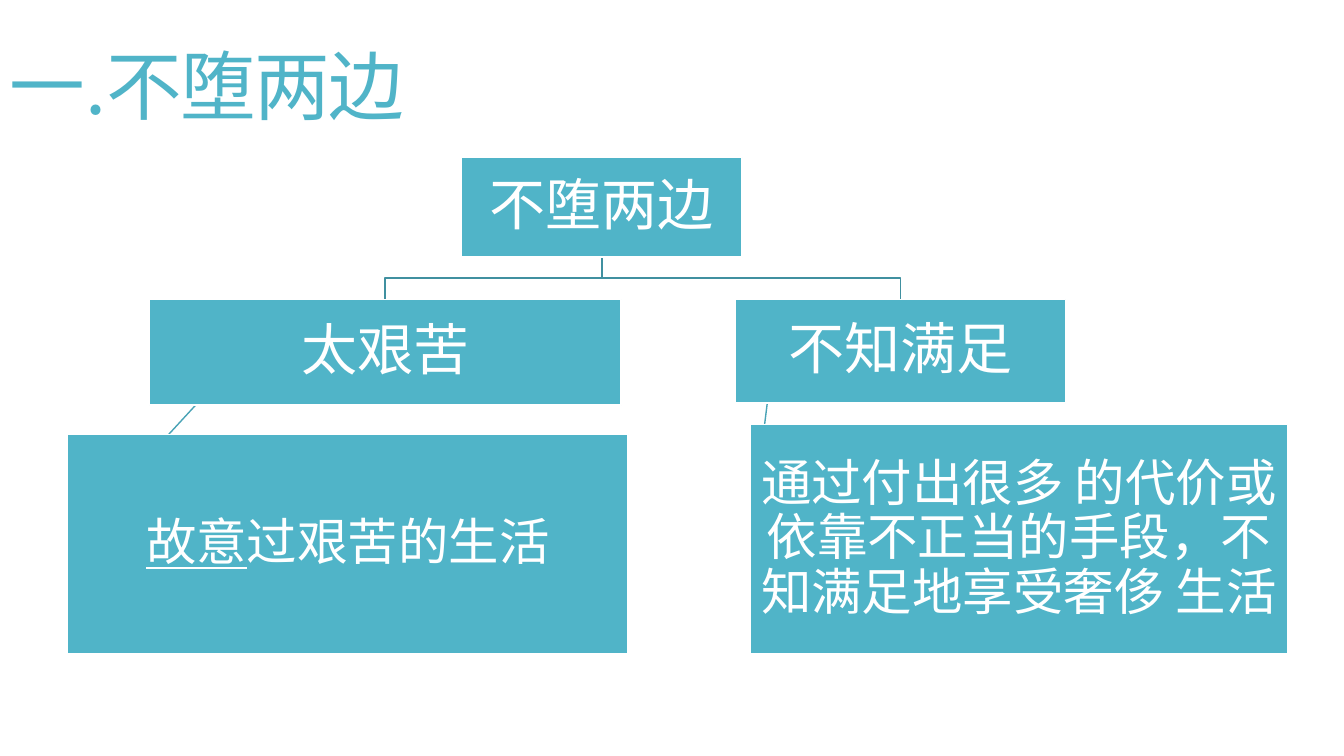
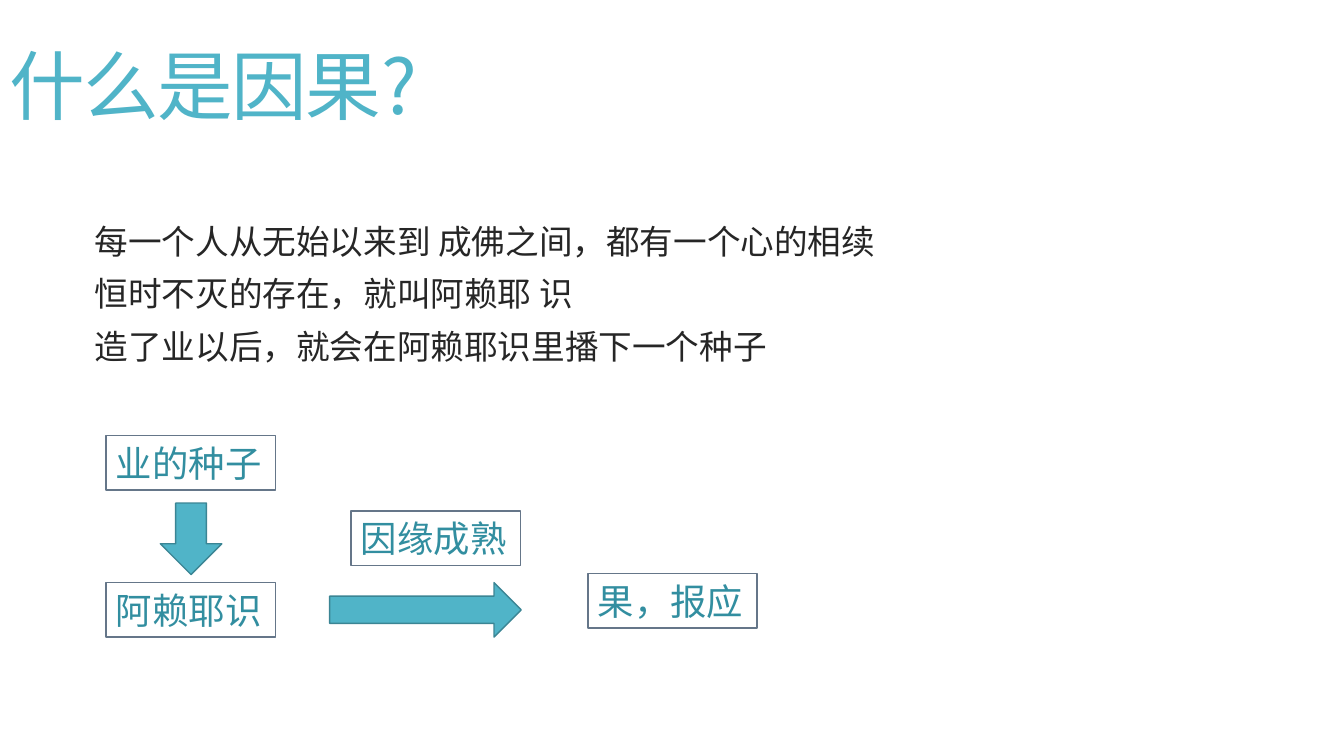
"""Build two slides: a tree on the two extremes and a flow on cause and effect."""
from dataclasses import dataclass

from pptx import Presentation
from pptx import util as u
from pptx.dml.color import RGBColor
from pptx.enum import shapes, text
from pptx.oxml.ns import qn
from lxml import etree

PX = 9144
TEAL = RGBColor(0x50, 0xB4, 0xC8)
DEEP_TEAL = RGBColor(0x32, 0x8E, 0xA0)
ELBOW_LINE = RGBColor(0x40, 0x90, 0xA0)
BRANCH_LINE = RGBColor(0x49, 0xA3, 0xB6)
ARROW_LINE = RGBColor(0x3B, 0x85, 0x94)
SLATE = RGBColor(0x65, 0x76, 0x89)
INK = RGBColor(0x26, 0x26, 0x26)
WHITE = RGBColor(0xFF, 0xFF, 0xFF)
CJK_FONT = "Noto Sans CJK SC"
LATIN_FONT = "Calibri"
LEFT, CENTER = text.PP_ALIGN.LEFT, text.PP_ALIGN.CENTER
KIND = shapes.MSO_SHAPE


@dataclass(frozen=True)
class Area:
    """A rectangle in px."""
    left: int
    top: int
    width: int
    height: int

    @property
    def middle(self) -> int:
        return self.left + self.width // 2

    @property
    def bottom(self) -> int:
        return self.top + self.height

    def emu(self) -> tuple:
        return tuple(n * PX for n in (self.left, self.top, self.width, self.height))


@dataclass(frozen=True)
class Style:
    """How a paragraph looks."""
    size: int
    color: RGBColor
    align: text.PP_ALIGN = LEFT
    spacing: float = 1.0
    font: str = CJK_FONT
    before: int = 0
    indent: int = 0
    tracking: int = 0


@dataclass(frozen=True)
class Node:
    """A filled box of the tree; its first letters may be underlined."""
    area: Area
    words: str
    style: Style
    underlined: int = 0


@dataclass(frozen=True)
class Label:
    """A framed step of the flow."""
    left: int
    top: int
    words: str


@dataclass(frozen=True)
class Arrow:
    """A block arrow of the flow."""
    kind: shapes.MSO_SHAPE
    area: Area


TITLE = Style(54, TEAL, spacing=0.85, tracking=-120)
BODY = Style(24, INK, spacing=0.85, font=LATIN_FONT, before=13, indent=10)
HEADING = Style(40, WHITE, CENTER, 0.9)
DETAIL = Style(36, WHITE, CENTER, 0.9)
STEP = Style(26, DEEP_TEAL)

ROOT = Node(Area(458, 156, 278, 99), "不堕两边", HEADING)
BRANCHES = (
    (Node(Area(148, 297, 468, 105), "太艰苦", HEADING),
     Node(Area(67, 431, 556, 218), "故意过艰苦的生活", DETAIL, 2)),
    (Node(Area(729, 297, 328, 103), "不知满足", HEADING),
     Node(Area(744, 421, 533, 228),
          "通过付出很多 的代价或依靠不正当的手段，不知满足地享受奢侈 生活", DETAIL)),
)
LINES = ("每一个人从无始以来到 成佛之间，都有一个心的相续",
         "恒时不灭的存在，就叫阿赖耶 识",
         "造了业以后，就会在阿赖耶识里播下一个种子")
LABELS = (Label(105, 432, "业的种子"), Label(105, 578, "阿赖耶识"),
          Label(348, 507, "因缘成熟"), Label(583, 569, "果，报应"))
ARROWS = (Arrow(KIND.DOWN_ARROW, Area(159, 499, 61, 71)),
          Arrow(KIND.RIGHT_ARROW, Area(327, 578, 190, 54)))


def style_para(para, style: Style) -> None:
    """Apply a style to a paragraph."""
    para.alignment = style.align
    para.line_spacing = style.spacing
    para.space_before = u.Pt(style.before)
    font = para.font
    font.size, font.name, font.color.rgb = u.Pt(style.size), style.font, style.color
    props = para._p.get_or_add_pPr()
    if style.indent:
        props.set("marL", str(style.indent * PX))
        props.set("indent", "0")
    defaults = props.find(qn("a:defRPr"))
    if style.tracking:
        defaults.set("spc", str(style.tracking))
    etree.SubElement(defaults, qn("a:ea")).set("typeface", CJK_FONT)


def write(frame, lines: tuple, style: Style, anchor=text.MSO_ANCHOR.MIDDLE) -> None:
    """Fill a text frame with one paragraph a line."""
    frame.word_wrap = True
    frame.vertical_anchor = anchor
    for index, line in enumerate(lines):
        para = frame.add_paragraph() if index else frame.paragraphs[0]
        para.add_run().text = line
        style_para(para, style)


def add_title(page, words: str) -> None:
    """Write the slide title."""
    box = page.shapes.add_textbox(*Area(0, 0, 1178, 181).emu())
    write(box.text_frame, (words,), TITLE)


def add_box(page, kind, area: Area, fill: RGBColor, line: RGBColor):
    """Draw a preset shape with a thin outline."""
    box = page.shapes.add_shape(kind, *area.emu())
    box.shadow.inherit = False
    box.fill.solid()
    box.fill.fore_color.rgb = fill
    box.line.color.rgb = line
    box.line.width = u.Pt(1)
    return box


def add_node(page, node: Node) -> None:
    """Draw one box of the tree."""
    frame = add_box(page, KIND.RECTANGLE, node.area, TEAL, WHITE).text_frame
    frame.margin_left = frame.margin_right = 3 * PX
    frame.margin_top = frame.margin_bottom = 3 * PX
    write(frame, (node.words,), node.style)
    if node.underlined:
        para = frame.paragraphs[0]
        span = para.runs[0]
        span.text = node.words[:node.underlined]
        span.font.underline = True
        para.add_run().text = node.words[node.underlined:]


def add_elbow(page, parent: Area, child: Area) -> None:
    """Draw a bent line from a parent's bottom to a child's top."""
    turn = (parent.bottom + child.top) // 2
    builder = page.shapes.build_freeform(parent.middle, parent.bottom, scale=PX)
    builder.add_line_segments(
        ((parent.middle, turn), (child.middle, turn), (child.middle, child.top)),
        close=False)
    elbow = builder.convert_to_shape()
    elbow.shadow.inherit = False
    elbow.fill.background()
    elbow.line.color.rgb = ELBOW_LINE
    elbow.line.width = u.Pt(1)


def add_branch(page, parent: Area, child: Area) -> None:
    """Draw a slanted line from a tenth along the parent to the child's left side."""
    ends = (parent.left + parent.width // 10, parent.bottom,
            child.left, child.top + child.height // 2)
    branch = page.shapes.add_connector(
        shapes.MSO_CONNECTOR.STRAIGHT, *(n * PX for n in ends))
    branch.line.color.rgb = BRANCH_LINE
    branch.line.width = u.Pt(1)
    etree.SubElement(branch._element.spPr, qn("a:effectLst"))


def build_tree(page) -> None:
    """Draw the slide on the two extremes."""
    add_title(page, "一.不堕两边")
    for heading, detail in BRANCHES:
        add_branch(page, heading.area, detail.area)
        add_elbow(page, ROOT.area, heading.area)
    add_node(page, ROOT)
    for branch in BRANCHES:
        for node in branch:
            add_node(page, node)


def build_flow(page) -> None:
    """Draw the slide on cause and effect."""
    add_title(page, "什么是因果?")
    body = page.shapes.add_textbox(*Area(74, 220, 1176, 412).emu())
    write(body.text_frame, LINES, BODY, text.MSO_ANCHOR.TOP)
    for label in LABELS:
        area = Area(label.left, label.top, 168, 54)
        box = add_box(page, KIND.RECTANGLE, area, WHITE, SLATE)
        write(box.text_frame, (label.words,), STEP)
    for arrow in ARROWS:
        add_box(page, arrow.kind, arrow.area, TEAL, ARROW_LINE)


def main() -> None:
    """Build and save the deck."""
    deck = Presentation()
    deck.slide_width, deck.slide_height = 1333 * PX, 750 * PX
    for build in (build_tree, build_flow):
        build(deck.slides.add_slide(deck.slide_layouts[6]))
    deck.save("out.pptx")


if __name__ == "__main__":
    main()
